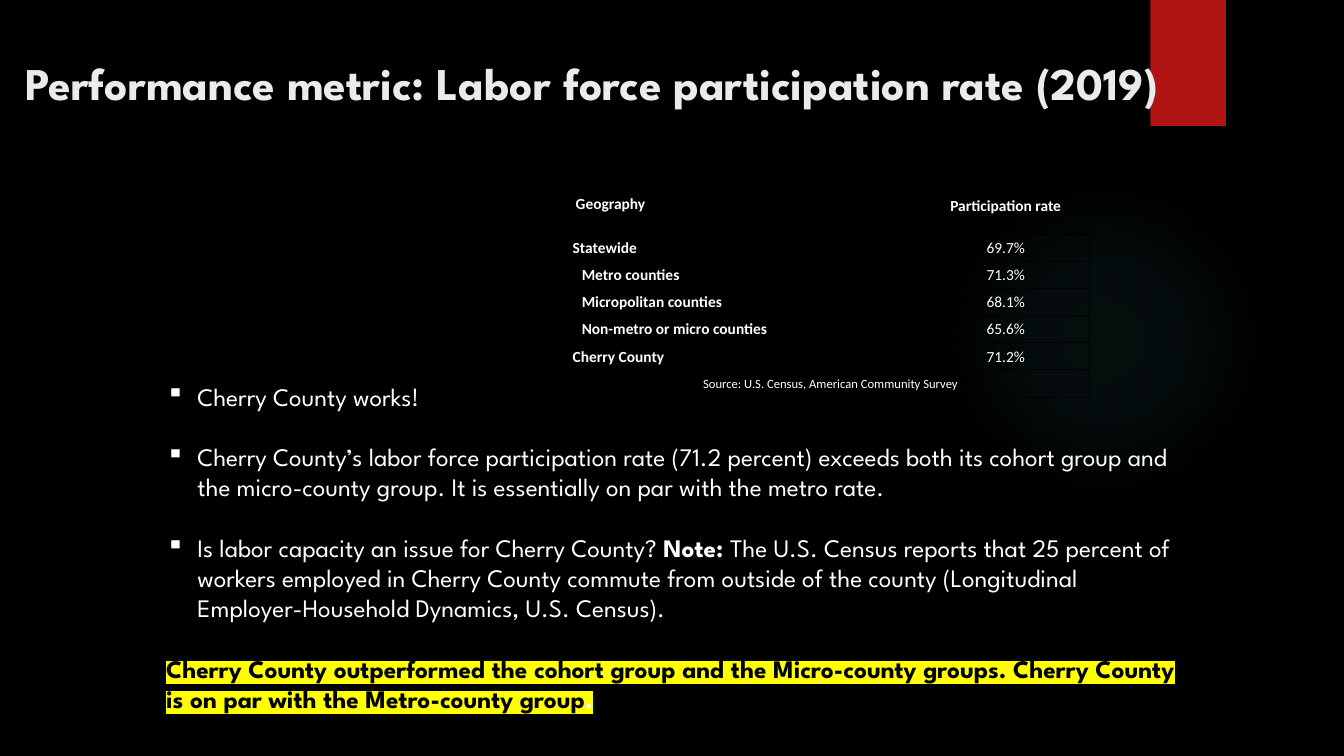
from dataclasses import dataclass

import pptx
import pptx.dml.color
import pptx.enum.shapes
import pptx.enum.text
import pptx.oxml
import pptx.oxml.ns
import pptx.util

Inches = pptx.util.Inches
Pt = pptx.util.Pt
Align = pptx.enum.text.PP_ALIGN
Anchor = pptx.enum.text.MSO_ANCHOR
Shape = pptx.enum.shapes.MSO_SHAPE
qn = pptx.oxml.ns.qn
NS = pptx.oxml.ns.nsdecls("a")


@dataclass(frozen=True)
class Theme:
    back: str = "000000"
    text: str = "FFFFFF"
    head: str = "EBEBEB"
    red: str = "B01513"
    glow: str = "50B9C1"
    mark: str = "FFFF00"
    face: str = "League Spartan"
    grid_face: str = "Calibri"
    head_size: float = 32.4
    body_size: float = 18
    grid_size: float = 11
    note_size: float = 9
    body_gap: float = 21.6


@dataclass(frozen=True)
class Run:
    text: str
    bold: bool = False
    color: str = "FFFFFF"
    mark: bool = False


@dataclass(frozen=True)
class Para:
    runs: tuple[Run, ...]
    bullet: bool = True


@dataclass(frozen=True)
class Row:
    name: str
    rate: str
    left: float = 0.01


THEME = Theme()
TITLE = "Performance metric: Labor force participation rate (2019)"
SOURCE = "Source: U.S. Census, American Community Survey"
ROWS = (
    Row("Geography", "Participation rate", 0.04),
    Row("Statewide", "69.7%"),
    Row("Metro counties", "71.3%", 0.1),
    Row("Micropolitan counties", "68.1%", 0.1),
    Row("Non-metro or micro counties", "65.6%", 0.1),
    Row("Cherry County", "71.2%"),
)
PARAS = (
    Para((Run("Cherry County works!"),)),
    Para((Run("Cherry County’s labor force participation rate (71.2 percent) exceeds both its "
              "cohort group and the micro-county group. It is essentially on par with the "
              "metro rate."),)),
    Para((Run("Is labor capacity an issue for Cherry County? "),
          Run("Note: ", bold=True),
          Run("The U.S. Census reports that 25 percent of workers employed in Cherry County "
              "commute from outside of the county (Longitudinal Employer-Household Dynamics, "
              "U.S. Census)."))),
    Para((Run("Cherry County outperformed the cohort group and the Micro-county groups. Cherry "
              "County is on par with the Metro-county group", True, THEME.back, True),
          Run(".", True, THEME.text, True)), bullet=False),
)


def rgb(color: str):
    return pptx.dml.color.RGBColor.from_string(color)


def assign(item, **values) -> None:
    """Set each named value as an attribute of the item."""
    for name, value in values.items():
        setattr(item, name, value)


def add_run(para, run: Run, face: str, size: float) -> None:
    part = para.add_run()
    part.text = run.text
    part.font.color.rgb = rgb(run.color)
    assign(part.font, name=face, size=Pt(size), bold=run.bold)
    if run.mark:
        mark = pptx.oxml.parse_xml(
            f'<a:highlight {NS}><a:srgbClr val="{THEME.mark}"/></a:highlight>')
        part.font._element.find(qn("a:solidFill")).addnext(mark)


def add_plain(slide, kind, *box: float):
    shape = slide.shapes.add_shape(kind, *map(Inches, box))
    shape.shadow.inherit = False
    shape.line.fill.background()
    return shape


def add_glow(slide) -> None:
    shape = add_plain(slide, Shape.OVAL, 9.41, 1.83, 3.08, 3.08)
    shape.fill.background()
    stops = "".join(
        f'<a:gs pos="{spot * 1000}"><a:srgbClr val="{THEME.glow}">'
        f'<a:alpha val="{alpha * 1000}"/></a:srgbClr></a:gs>'
        for spot, alpha in ((0, 7), (36, 6), (69, 0), (100, 0)))
    fill = pptx.oxml.parse_xml(
        f'<a:gradFill {NS}><a:gsLst>{stops}</a:gsLst><a:path path="circle">'
        '<a:fillToRect l="50000" t="50000" r="50000" b="50000"/></a:path></a:gradFill>')
    props = shape._element.spPr
    props.replace(props.find(qn("a:noFill")), fill)


def add_tab(slide) -> None:
    shape = add_plain(slide, Shape.RECTANGLE, 11.41, 0, 0.75, 1.25)
    shape.fill.solid()
    shape.fill.fore_color.rgb = rgb(THEME.red)


def add_title(slide) -> None:
    title = slide.shapes.title
    assign(title, left=Inches(0.15), top=Inches(0.5), width=Inches(13.11), height=Inches(1.13))
    frame = title.text_frame
    assign(frame, word_wrap=True, vertical_anchor=Anchor.TOP,
           auto_size=pptx.enum.text.MSO_AUTO_SIZE.NONE)
    para = frame.paragraphs[0]
    para.alignment = Align.LEFT
    add_run(para, Run(TITLE, True, THEME.head), THEME.face, THEME.head_size)
    slide.shapes._spTree.append(title._element)


def fill_cell(cell, run: Run, size: float, left: float = 0.01, base: float = 0,
              align=Align.CENTER) -> None:
    assign(cell, vertical_anchor=Anchor.MIDDLE, margin_left=Inches(left),
           margin_right=Inches(0.01), margin_top=Inches(0.01), margin_bottom=Inches(base))
    para = cell.text_frame.paragraphs[0]
    para.alignment = align
    add_run(para, run, THEME.grid_face, size)


def add_edges(cell) -> None:
    cell.fill.background()
    props = cell._tc.get_or_add_tcPr()
    for place, side in enumerate("LRTB"):
        props.insert(place, pptx.oxml.parse_xml(
            f'<a:ln{side} {NS} w="{Pt(0.5)}"><a:solidFill>'
            f'<a:srgbClr val="{THEME.back}"/></a:solidFill></a:ln{side}>'))


def add_grid(slide) -> None:
    box = map(Inches, (5.67, 1.77, 5.13, 2.17))
    table = slide.shapes.add_table(len(ROWS) + 1, 2, *box).table
    assign(table, first_row=False, horz_banding=False)
    for column, width in zip(table.columns, (3.48, 1.65)):
        column.width = Inches(width)
    for place, row in enumerate(table.rows):
        row.height = Inches(0.27 if place else 0.55)
    for cell in table.iter_cells():
        add_edges(cell)
    for place, row in enumerate(ROWS):
        top = place == 0
        fill_cell(table.cell(place, 0), Run(row.name, True), THEME.grid_size, row.left,
                  0.04 if top else 0, Align.LEFT)
        fill_cell(table.cell(place, 1), Run(row.rate, top), THEME.grid_size)
    last = table.cell(len(ROWS), 0)
    last.merge(table.cell(len(ROWS), 1))
    fill_cell(last, Run(SOURCE), THEME.note_size)


def add_bullet(para) -> None:
    props = para._p.get_or_add_pPr()
    props.set("marL", str(Inches(0.31)))
    props.set("indent", str(-Inches(0.31)))
    props.append(pptx.oxml.parse_xml(f'<a:buChar {NS} char="▪"/>'))


def add_body(slide) -> None:
    frame = slide.shapes.add_textbox(*map(Inches, (1.55, 3.73, 10.24, 3.74))).text_frame
    frame.word_wrap = True
    for place, item in enumerate(PARAS):
        para = frame.add_paragraph() if place else frame.paragraphs[0]
        if place:
            para.space_before = Pt(THEME.body_gap)
        if item.bullet:
            add_bullet(para)
        for run in item.runs:
            add_run(para, run, THEME.face, THEME.body_size)


def main() -> None:
    deck = pptx.Presentation()
    assign(deck, slide_width=Inches(13.33), slide_height=Inches(7.5))
    slide = deck.slides.add_slide(deck.slide_layouts.get_by_name("Title Only"))
    slide.background.fill.solid()
    slide.background.fill.fore_color.rgb = rgb(THEME.back)
    for draw in (add_glow, add_tab, add_title, add_grid, add_body):
        draw(slide)
    deck.save("out.pptx")


if __name__ == "__main__":
    main()
